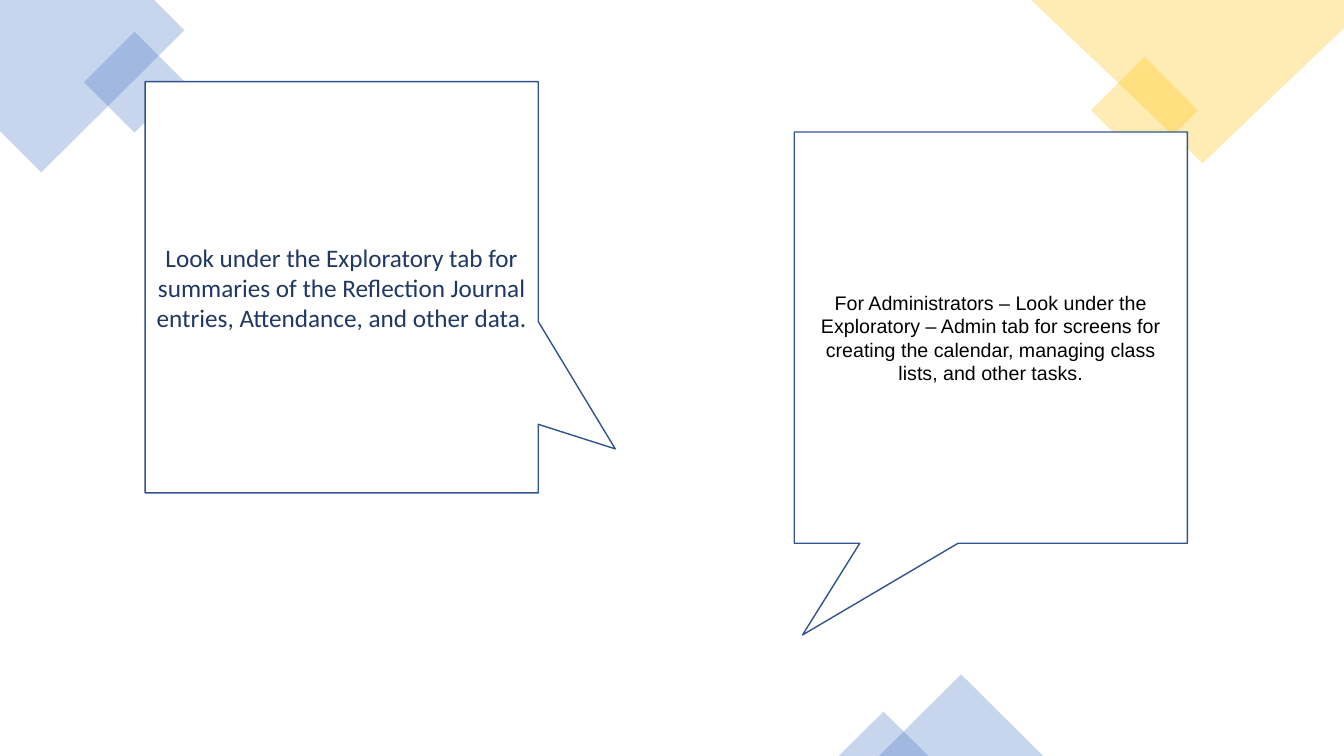
from dataclasses import dataclass

from lxml.etree import SubElement
from pptx import Presentation
from pptx.dml.color import RGBColor
from pptx.enum.shapes import MSO_SHAPE
from pptx.enum.text import MSO_ANCHOR, PP_ALIGN
from pptx.oxml.ns import qn
from pptx.shapes.autoshape import Shape
from pptx.shapes.shapetree import SlideShapes
from pptx.util import Pt

BLUE = RGBColor(0x44, 0x72, 0xC4)
GOLD = RGBColor(0xFF, 0xC0, 0x00)
WHITE = RGBColor(0xFF, 0xFF, 0xFF)
EDGE = RGBColor(0x31, 0x53, 0x8F)
NAVY = RGBColor(0x1F, 0x38, 0x64)
BLACK = RGBColor(0x00, 0x00, 0x00)

WIDTH, HEIGHT = 960, 540
OPAQUE = 29
BOX_WIDTH, BOX_HEIGHT = 280.8, 293.76


@dataclass(frozen=True)
class Corner:
    points: tuple[tuple[float, float], ...]
    color: RGBColor


@dataclass(frozen=True)
class Diamond:
    left: float
    top: float
    side: float
    color: RGBColor


@dataclass(frozen=True)
class Peak:
    left: float
    width: float
    height: float
    color: RGBColor


@dataclass(frozen=True)
class Bubble:
    left: float
    top: float
    tail: tuple[float, float]
    text: str
    font: str
    size: float
    color: RGBColor


CORNERS = (
    Corner(((110.16, 0), (0, 0), (0, 93.6), (29.52, 123.12), (131.76, 21.6)), BLUE),
    Corner(((WIDTH, 0), (736.56, 0), (858.96, 116.64), (WIDTH, 20.16)), GOLD),
)
DIAMONDS = (
    Diamond(70.56, 33.12, 51.12, BLUE),
    Diamond(790.56, 51.84, 54, GOLD),
)
PEAKS = (
    Peak(627.84, 117.36, 58.32, BLUE),
    Peak(599.04, 64.08, 31.68, BLUE),
)
BUBBLES = (
    Bubble(
        103.68, 58.32, (0.696, 0.393),
        "Look under the Exploratory tab for summaries of the Reflection Journal "
        "entries, Attendance, and other data.",
        "Calibri", 18, NAVY,
    ),
    Bubble(
        567.36, 94.32, (-0.479, 0.723),
        "For Administrators – Look under the Exploratory – Admin tab for screens "
        "for creating the calendar, managing class lists, and other tasks.",
        "Arial", 14, BLACK,
    ),
)


def tint(shape: Shape, color: RGBColor) -> None:
    shape.shadow.inherit = False
    shape.fill.solid()
    shape.fill.fore_color.rgb = color
    shape.line.fill.background()
    tone = shape.fill._xPr.find(qn("a:solidFill"))[0]
    SubElement(tone, qn("a:alpha")).set("val", str(OPAQUE * 1000))


def draw_corner(shapes: SlideShapes, corner: Corner) -> None:
    first, *rest = [(Pt(x), Pt(y)) for x, y in corner.points]
    builder = shapes.build_freeform(*first)
    builder.add_line_segments(rest, close=True)
    tint(builder.convert_to_shape(), corner.color)


def draw_diamond(shapes: SlideShapes, diamond: Diamond) -> None:
    side = Pt(diamond.side)
    shape = shapes.add_shape(
        MSO_SHAPE.RECTANGLE, Pt(diamond.left), Pt(diamond.top), side, side
    )
    shape.rotation = 315
    tint(shape, diamond.color)


def draw_peak(shapes: SlideShapes, peak: Peak) -> None:
    shape = shapes.add_shape(
        MSO_SHAPE.ISOSCELES_TRIANGLE,
        Pt(peak.left), Pt(HEIGHT - peak.height), Pt(peak.width), Pt(peak.height),
    )
    tint(shape, peak.color)


def draw_bubble(shapes: SlideShapes, bubble: Bubble) -> None:
    shape = shapes.add_shape(
        MSO_SHAPE.RECTANGULAR_CALLOUT,
        Pt(bubble.left), Pt(bubble.top), Pt(BOX_WIDTH), Pt(BOX_HEIGHT),
    )
    shape.adjustments[0], shape.adjustments[1] = bubble.tail
    shape.shadow.inherit = False
    shape.fill.solid()
    shape.fill.fore_color.rgb = WHITE
    shape.line.color.rgb = EDGE
    shape.line.width = Pt(1)

    frame = shape.text_frame
    frame.word_wrap = True
    frame.vertical_anchor = MSO_ANCHOR.MIDDLE
    para = frame.paragraphs[0]
    para.alignment = PP_ALIGN.CENTER
    run = para.add_run()
    run.text = bubble.text
    run.font.name = bubble.font
    run.font.size = Pt(bubble.size)
    run.font.color.rgb = bubble.color


def main() -> None:
    deck = Presentation()
    deck.slide_width, deck.slide_height = Pt(WIDTH), Pt(HEIGHT)
    shapes = deck.slides.add_slide(deck.slide_layouts[6]).shapes
    for corner in CORNERS:
        draw_corner(shapes, corner)
    for diamond in DIAMONDS:
        draw_diamond(shapes, diamond)
    for peak in PEAKS:
        draw_peak(shapes, peak)
    for bubble in BUBBLES:
        draw_bubble(shapes, bubble)
    deck.save("out.pptx")


if __name__ == "__main__":
    main()
